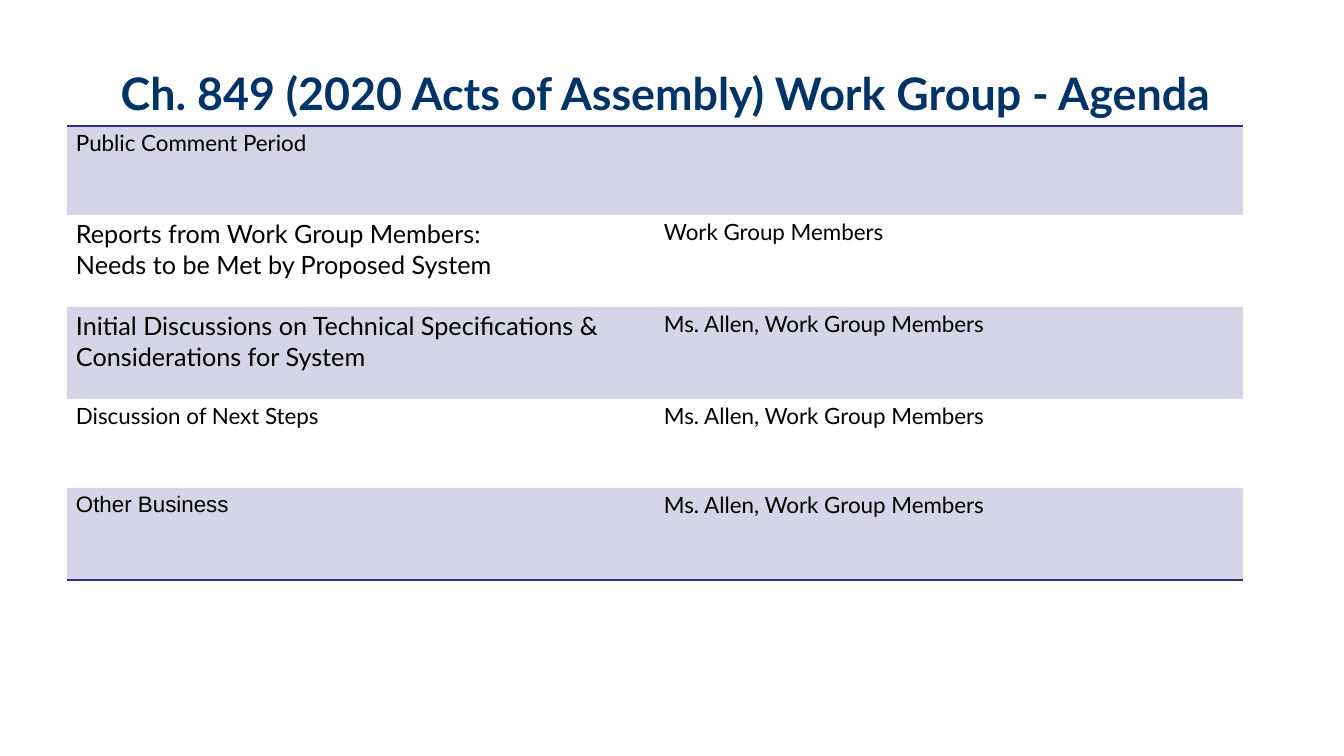
from lxml import etree
from pptx import Presentation
from pptx import util as u
from pptx.dml.color import RGBColor
from pptx.enum import text
from pptx.oxml import ns

# Content
TITLE = "Ch. 849 (2020 Acts of Assembly) Work Group - Agenda"
LEAD = "Ms. Allen, Work Group Members"
# Each row: height, topic lines, topic size, topic font, speaker
AGENDA = [
    (89, ["Public Comment Period"], 16, "Lato", ""),
    (92, ["Reports from Work Group Members:",
          "Needs to be Met by Proposed System"], 18, "Lato", "Work Group Members"),
    (92, ["Initial Discussions on Technical Specifications & "
          "Considerations for System"], 18, "Lato", LEAD),
    (89, ["Discussion of Next Steps"], 16, "Lato", LEAD),
    (92, ["Other Business"], 16, "Arial", LEAD),
]
NAVY, BLUE, BLACK = "003366", "2D2D8A", "000000"
NO_GRID = "{2D5ABB26-0587-4C30-8999-92F81FD0307C}"
LEFT, TOP, COL = 67, 126, 588


def px(n):
    return u.Emu(round(n * 914400 / 100.8))


def color(code):
    return RGBColor.from_string(code)


def write(para, lines, size, font, code, bold=False):
    for i, line in enumerate(lines):
        if i:
            para.add_line_break()
        run = para.add_run()
        run.text = line
        run.font.size = u.Pt(size)
        run.font.name = font
        run.font.bold = bold
        run.font.color.rgb = color(code)


def shade(cell):
    cell.fill.solid()
    cell.fill.fore_color.rgb = color(BLUE)
    tint = cell._tc.tcPr.find(".//" + ns.qn("a:srgbClr"))
    etree.SubElement(tint, ns.qn("a:alpha"), val="20000")


def rule(cell, side):
    line = etree.Element(ns.qn("a:" + side), w=str(u.Pt(1)))
    fill = etree.SubElement(line, ns.qn("a:solidFill"))
    etree.SubElement(fill, ns.qn("a:srgbClr"), val=BLUE)
    cell._tc.get_or_add_tcPr().insert(0, line)


# Slide
deck = Presentation()
deck.slide_width, deck.slide_height = px(1344), px(756)
slide = deck.slides.add_slide(deck.slide_layouts[6])

# Table
height = sum(row[0] for row in AGENDA)
frame = slide.shapes.add_table(len(AGENDA), 2, px(LEFT), px(TOP), px(2 * COL), px(height))
table = frame.table
table.first_row = table.horz_banding = False
table._tbl.tblPr.find(ns.qn("a:tableStyleId")).text = NO_GRID
for col in table.columns:
    col.width = px(COL)
table.cell(0, 0).merge(table.cell(0, 1))

for r, (tall, topic, size, font, who) in enumerate(AGENDA):
    table.rows[r].height = px(tall)
    for c, (lines, pt, face) in enumerate([(topic, size, font), ([who], 16, "Lato")]):
        cell = table.cell(r, c)
        cell.margin_left = cell.margin_right = px(9)
        cell.margin_top = cell.margin_bottom = px(4)
        if r % 2 == 0:
            shade(cell)
        if r == 0:
            rule(cell, "lnT")
        if r == len(AGENDA) - 1:
            rule(cell, "lnB")
        if lines[0]:
            write(cell.text_frame.paragraphs[0], lines, pt, face, BLACK)

# Title
box = slide.shapes.add_textbox(px(LEFT), px(30), px(1198), px(126))
body = box.text_frame
body.word_wrap = True
body.vertical_anchor = text.MSO_ANCHOR.MIDDLE
body.paragraphs[0].alignment = text.PP_ALIGN.CENTER
write(body.paragraphs[0], [TITLE], 32, "Lato", NAVY, True)

deck.save("out.pptx")
